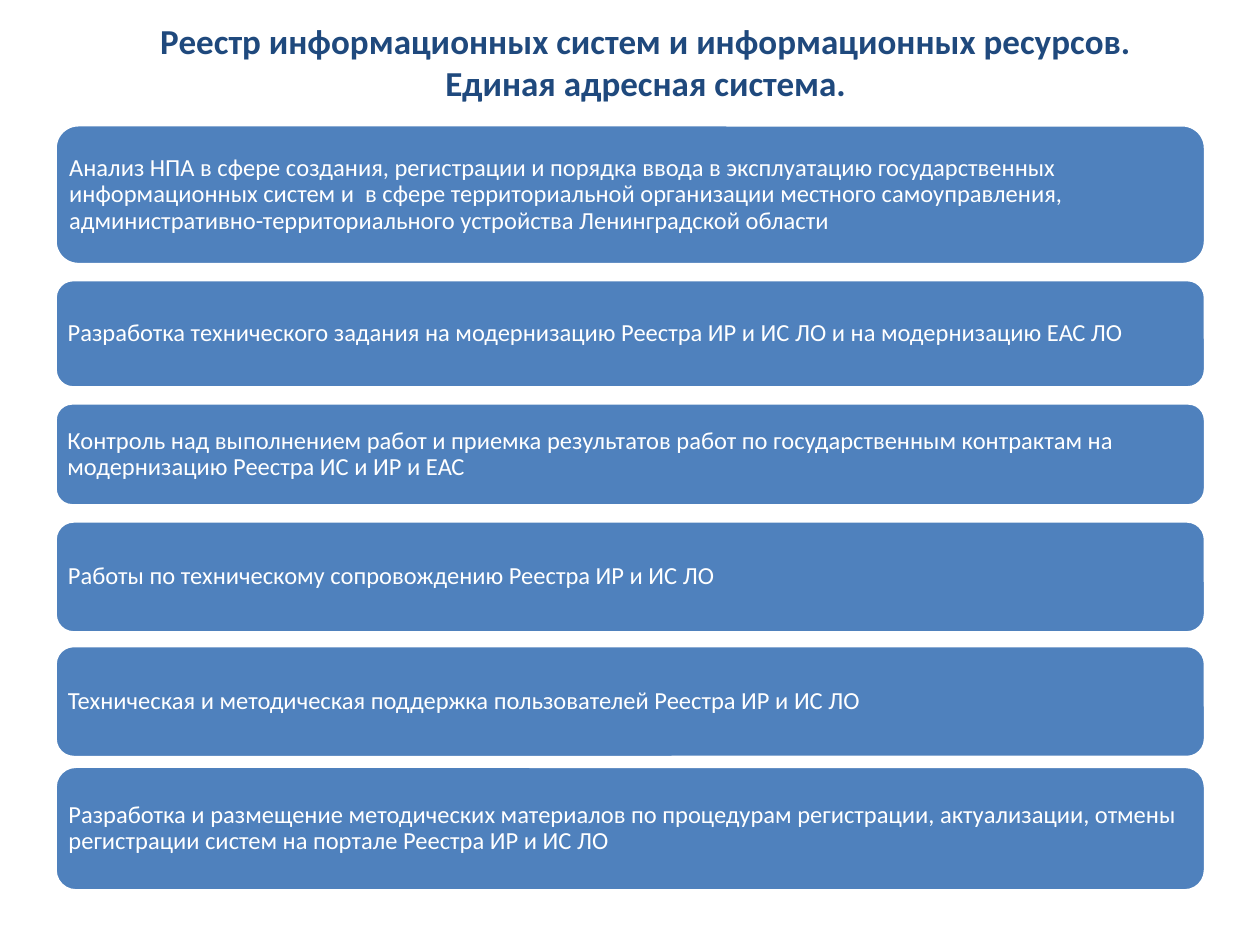
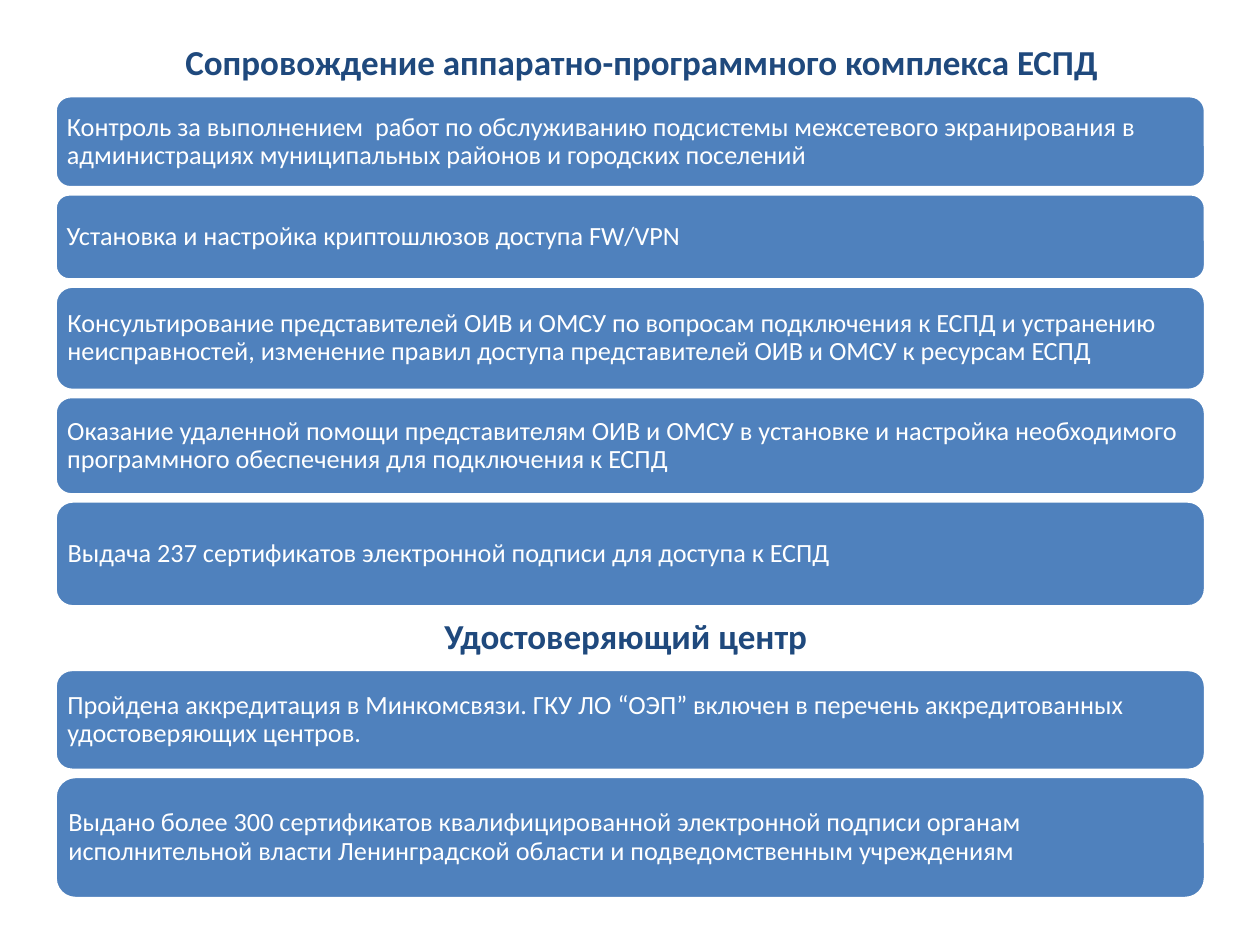
from dataclasses import dataclass

from pptx import Presentation
from pptx.dml.color import RGBColor
from pptx.enum import shapes, text
from pptx.util import Pt

# Content: each bar is (kind, height, words); gaps lie between the bars
PAGES = [
    {
        "title": "Реестр информационных систем и информационных ресурсов. Единая адресная система.",
        "top": 71.3,
        "gaps": [8.6, 8.6, 8.6, 7.2, 5],
        "size": 14,
        "bars": [
            ("task", 79.9, "Анализ НПА в сфере создания, регистрации и порядка ввода в эксплуатацию "
             "государственных информационных систем и  в сфере территориальной организации "
             "местного самоуправления, административно-территориального устройства "
             "Ленинградской области"),
            ("task", 61.9, "Разработка технического задания на модернизацию Реестра ИР и ИС ЛО "
             "и на модернизацию ЕАС ЛО"),
            ("task", 58.8, "Контроль над выполнением работ и приемка результатов работ по "
             "государственным контрактам на модернизацию Реестра ИС и ИР и ЕАС"),
            ("task", 64, "Работы по техническому сопровождению Реестра ИР и ИС ЛО"),
            ("task", 64, "Техническая и методическая поддержка пользователей Реестра ИР и ИС ЛО"),
            ("task", 71.2, "Разработка и размещение методических материалов по процедурам "
             "регистрации, актуализации, отмены регистрации систем на портале "
             "Реестра ИР и ИС ЛО"),
        ],
    },
    {
        "title": "Сопровождение аппаратно-программного комплекса ЕСПД ",
        "top": 54.7,
        "gaps": [3.5] * 7,
        "size": 15,
        "bars": [
            ("task", 52.6, "Контроль за выполнением  работ по обслуживанию подсистемы межсетевого "
             "экранирования в администрациях муниципальных районов и городских поселений"),
            ("task", 49.2, "Установка и настройка криптошлюзов доступа FW/VPN"),
            ("task", 59.6, "Консультирование представителей ОИВ и ОМСУ по вопросам подключения "
             "к ЕСПД и устранению неисправностей, изменение правил доступа представителей "
             "ОИВ и ОМСУ к ресурсам ЕСПД"),
            ("task", 56.2, "Оказание удаленной помощи представителям ОИВ и ОМСУ в установке и "
             "настройка необходимого программного обеспечения для подключения к ЕСПД"),
            ("task", 60.5, "Выдача 237 сертификатов электронной подписи для доступа к ЕСПД"),
            ("heading", 28.8, "Удостоверяющий центр"),
            ("task", 57.6, "Пройдена аккредитация в Минкомсвязи. ГКУ ЛО “ОЭП” включен в перечень "
             "аккредитованных удостоверяющих центров."),
            ("task", 69.8, "Выдано более 300 сертификатов квалифицированной электронной подписи "
             "органам исполнительной власти Ленинградской области и подведомственным "
             "учреждениям"),
        ],
    },
]


# Theme
@dataclass(frozen=True)
class Theme:
    font: str = "Calibri"
    navy: RGBColor = RGBColor(0x1F, 0x49, 0x7D)
    blue: RGBColor = RGBColor(0x4F, 0x81, 0xBD)
    white: RGBColor = RGBColor(0xFF, 0xFF, 0xFF)
    title_size: int = 20
    outline: int = 2


THEME = Theme()
TITLE_BOX = {"left": Pt(54), "top": Pt(15.1), "width": Pt(630), "height": Pt(39.6)}
BAR_LEFT = 31.5
KINDS = {
    "task": {"width": 657.4, "fill": THEME.blue, "color": THEME.white, "bold": False,
             "align": text.PP_ALIGN.LEFT, "inset": 4.2},
    "heading": {"width": 652.3, "fill": THEME.white, "color": THEME.navy, "bold": True,
                "align": text.PP_ALIGN.CENTER, "inset": 6},
}


def apply(target, values):
    for name, value in values.items():
        setattr(target, name, value)


def write(frame, words, size, color, bold, align, spacing=1.0):
    apply(frame, {"word_wrap": True, "auto_size": text.MSO_AUTO_SIZE.NONE,
                  "vertical_anchor": text.MSO_ANCHOR.MIDDLE})
    para = frame.paragraphs[0]
    apply(para, {"alignment": align, "line_spacing": spacing})
    span = para.add_run()
    span.text = words
    apply(span.font, {"name": THEME.font, "size": Pt(size), "bold": bold})
    span.font.color.rgb = color


def add_title(page, words):
    title = page.shapes.title
    apply(title, TITLE_BOX)
    write(title.text_frame, words, THEME.title_size, THEME.navy, True, text.PP_ALIGN.CENTER)


def add_bar(page, kind, top, height, words, size):
    look = KINDS[kind]
    bar = page.shapes.add_shape(shapes.MSO_SHAPE.ROUNDED_RECTANGLE, Pt(BAR_LEFT), Pt(top),
                                Pt(look["width"]), Pt(height))
    bar.shadow.inherit = False
    bar.fill.solid()
    bar.fill.fore_color.rgb = look["fill"]
    bar.line.color.rgb = THEME.white
    bar.line.width = Pt(THEME.outline)
    side, edge = Pt(look["inset"]), Pt(look["inset"] / 2)
    apply(bar.text_frame, {"margin_left": side, "margin_right": side,
                           "margin_top": edge, "margin_bottom": edge})
    write(bar.text_frame, words, THEME.title_size if kind == "heading" else size,
          look["color"], look["bold"], look["align"], 0.9)


def add_page(deck, content):
    page = deck.slides.add_slide(deck.slide_layouts.get_by_name("Title Only"))
    add_title(page, content["title"])
    # Stack the bars downwards
    top = content["top"]
    for (kind, height, words), gap in zip(content["bars"], content["gaps"] + [0]):
        add_bar(page, kind, top, height, words, content["size"])
        top += height + gap


def main():
    deck = Presentation()
    apply(deck, {"slide_width": Pt(720), "slide_height": Pt(540)})
    for content in PAGES:
        add_page(deck, content)
    deck.save("out.pptx")


if __name__ == "__main__":
    main()
